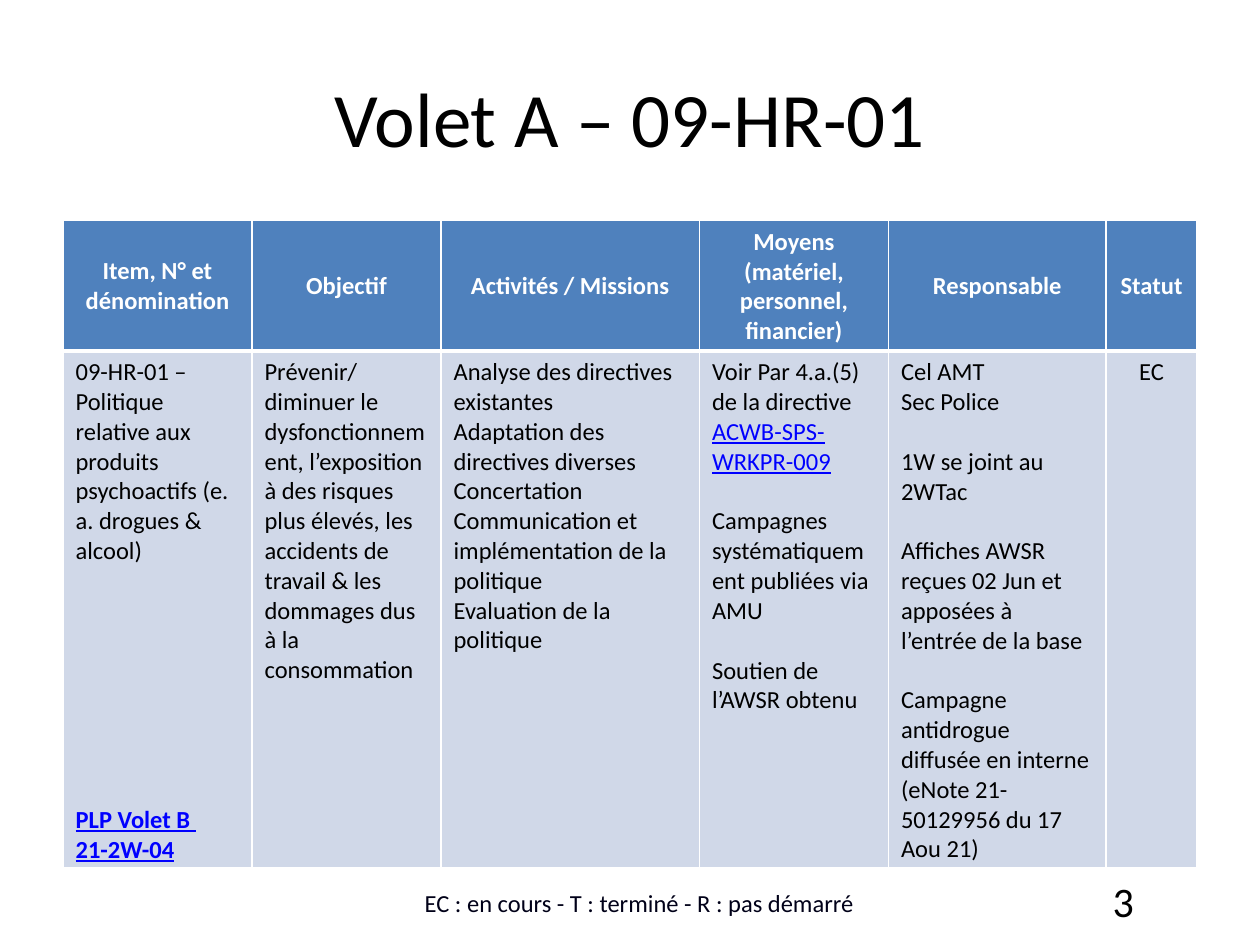
from dataclasses import dataclass
from typing import Any

from lxml import etree
from pptx import Presentation
from pptx import util as u
from pptx.dml.color import RGBColor
from pptx.enum import lang, text
from pptx.oxml import ns

BLACK = RGBColor(0x00, 0x00, 0x00)
WHITE = RGBColor(0xFF, 0xFF, 0xFF)
NAVY = RGBColor(0x00, 0x00, 0x18)
LINK = RGBColor(0x00, 0x00, 0xFF)
HEADER_BLUE = RGBColor(0x4F, 0x81, 0xBD)
BODY_BLUE = RGBColor(0xD0, 0xD8, 0xE8)

CENTER = text.PP_ALIGN.CENTER
RIGHT = text.PP_ALIGN.RIGHT
LEFT = text.PP_ALIGN.LEFT
MIDDLE = text.MSO_ANCHOR.MIDDLE
TOP = text.MSO_ANCHOR.TOP
BOTTOM = text.MSO_ANCHOR.BOTTOM


@dataclass
class Run:
    words: str
    color: RGBColor = BLACK
    size: int = 14
    bold: bool = False
    underline: bool = False


@dataclass
class Para:
    runs: list
    blank_lines: int = 0
    align: Any = LEFT


@dataclass
class SlideBuilder:
    slide: Any
    font: str = "Calibri"
    line_height: float = 17.09

    def fill_text(self, frame, paras):
        frame.word_wrap = True
        for index, para in enumerate(paras):
            paragraph = frame.add_paragraph() if index else frame.paragraphs[0]
            paragraph.alignment = para.align
            if para.blank_lines:
                paragraph.space_before = u.Pt(round(para.blank_lines * self.line_height, 1))
            for run in para.runs:
                self.add_run(paragraph, run)

    def add_run(self, paragraph, run):
        for index, line in enumerate(run.words.split("\n")):
            if index:
                paragraph.add_line_break()
            piece = paragraph.add_run()
            piece.text = line
            font = piece.font
            font.name = self.font
            font.size = u.Pt(run.size)
            font.bold = run.bold
            font.underline = run.underline
            font.color.rgb = run.color
            font.language_id = lang.MSO_LANGUAGE_ID.FRENCH

    def text_box(self, left, top, width, height, para, anchor):
        box = self.slide.shapes.add_textbox(u.Cm(left), u.Cm(top), u.Cm(width), u.Cm(height))
        box.text_frame.vertical_anchor = anchor
        self.fill_text(box.text_frame, [para])

    def cell(self, cell, paras, fill, anchor, edges):
        properties = cell._tc.get_or_add_tcPr()
        for side, points in edges.items():
            line = etree.SubElement(properties, ns.qn(f"a:ln{side}"), w=str(u.Pt(points)))
            solid = etree.SubElement(line, ns.qn("a:solidFill"))
            etree.SubElement(solid, ns.qn("a:srgbClr"), val=str(WHITE))
        cell.fill.solid()
        cell.fill.fore_color.rgb = fill
        cell.vertical_anchor = anchor
        self.fill_text(cell.text_frame, paras)

    def table(self, left, top, widths, heights, headings, contents):
        grid = self.slide.shapes.add_table(
            2, len(widths), u.Cm(left), u.Cm(top), u.Cm(sum(widths)), u.Cm(sum(heights))
        ).table
        for column, width in zip(grid.columns, widths):
            column.width = u.Cm(width)
        for row, height in zip(grid.rows, heights):
            row.height = u.Cm(height)
        header_edges = {"L": 1, "R": 1, "T": 1, "B": 3}
        body_edges = {"L": 1, "R": 1, "T": 3, "B": 1}
        for index, (heading, paras) in enumerate(zip(headings, contents)):
            title = Para([Run(heading, WHITE, bold=True)], align=CENTER)
            self.cell(grid.cell(0, index), [title], HEADER_BLUE, MIDDLE, header_edges)
            self.cell(grid.cell(1, index), paras, BODY_BLUE, TOP, body_edges)


def plain(words, blank_lines=0, align=LEFT):
    return Para([Run(words)], blank_lines, align)


HEADINGS = [
    "Item, N° et dénomination",
    "Objectif",
    "Activités / Missions",
    "Moyens (matériel, personnel, financier)",
    "Responsable",
    "Statut",
]

item = [
    plain("09-HR-01 – Politique relative aux produits psychoactifs (e. a. drogues & alcool)"),
    Para([Run("PLP Volet B \n21-2W-04", LINK, bold=True, underline=True)], blank_lines=8),
]
objectif = [
    plain(
        "Prévenir/diminuer le dysfonctionnement, l’exposition à des risques plus élevés, "
        "les accidents de travail & les dommages dus à la consommation"
    )
]
activites = [
    plain(words)
    for words in (
        "Analyse des directives existantes",
        "Adaptation des directives diverses",
        "Concertation",
        "Communication et implémentation de la politique",
        "Evaluation de la politique",
    )
]
moyens = [
    Para([
        Run("Voir Par 4.a.(5) de la directive "),
        Run("ACWB-SPS-WRKPR-009", LINK, underline=True),
    ]),
    plain("Campagnes systématiquement publiées via AMU", 1),
    plain("Soutien de l’AWSR obtenu", 1),
]
responsable = [
    plain("Cel AMT"),
    plain("Sec Police"),
    plain("1W se joint au 2WTac", 1),
    plain("Affiches AWSR reçues 02 Jun et apposées à l’entrée de la base", 1),
    plain("Campagne antidrogue diffusée en interne (eNote 21-50129956 du 17 Aou 21)", 1),
]
statut = [plain("EC", align=CENTER)]


def main():
    deck = Presentation()
    deck.slide_width, deck.slide_height = u.Cm(25.4), u.Cm(19.05)
    builder = SlideBuilder(deck.slides.add_slide(deck.slide_layouts[6]))
    builder.text_box(
        1.27, 0.76, 22.86, 3.18,
        Para([Run("Volet A – 09-HR-01", size=44)], align=CENTER), MIDDLE,
    )
    builder.table(
        1.27, 4.45, [3.81, 3.81, 5.21, 3.81, 4.39, 1.83], [2.57, 9.93],
        HEADINGS, [item, objectif, activites, moyens, responsable, statut],
    )
    builder.text_box(18.21, 17.65, 4.9, 1.02, Para([Run("3", size=24)], align=RIGHT), MIDDLE)
    legend = Run("EC : en cours - T : terminé - R : pas démarré", NAVY)
    builder.text_box(5.89, 17.65, 14, 0.97, Para([legend], align=CENTER), BOTTOM)
    deck.save("out.pptx")


if __name__ == "__main__":
    main()
